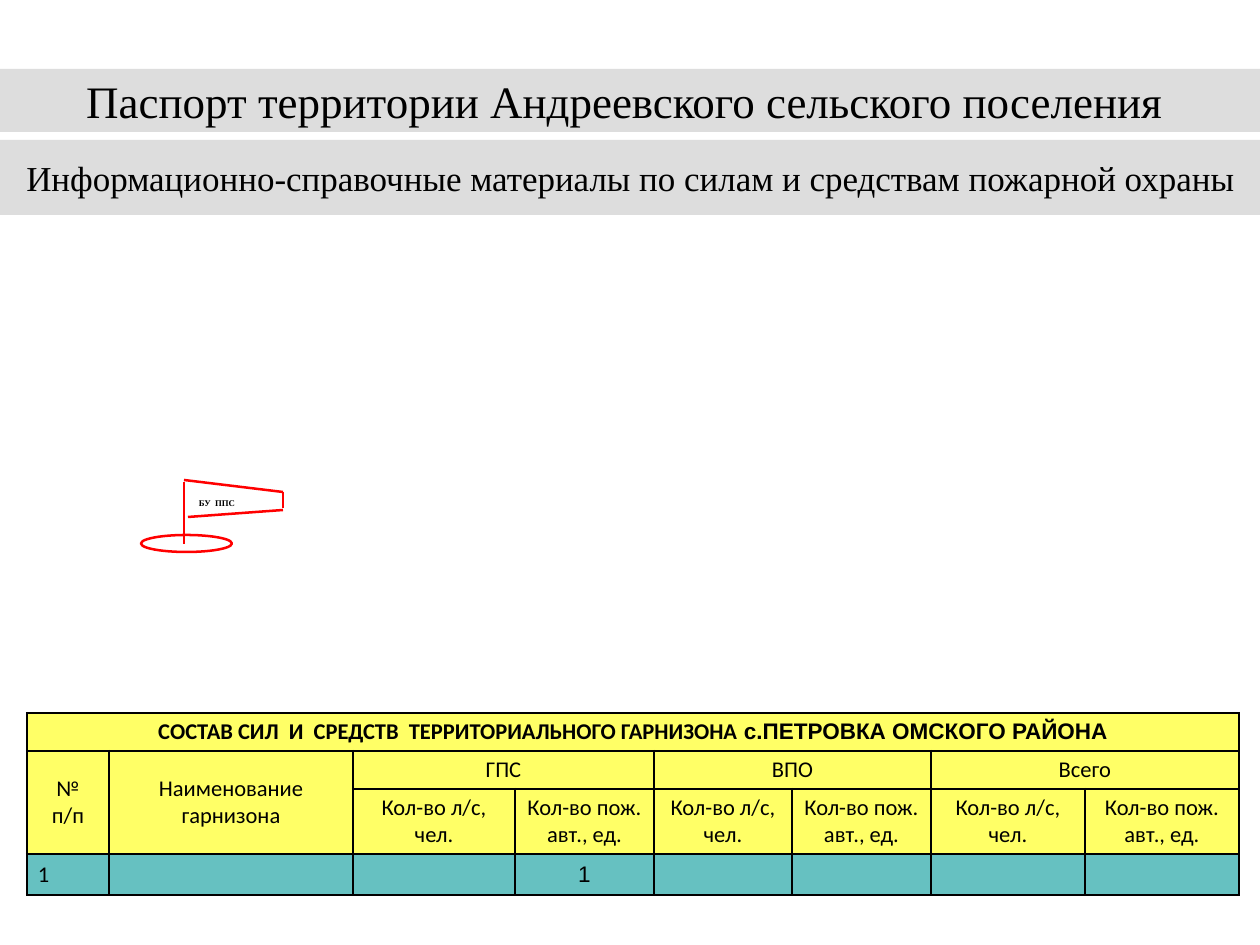
import pptx
import pptx.dml.color
import pptx.enum.shapes
import pptx.enum.text
import pptx.oxml
import pptx.oxml.ns
import pptx.util
from lxml import etree

RGBColor = pptx.dml.color.RGBColor
Pt = pptx.util.Pt
PP_ALIGN = pptx.enum.text.PP_ALIGN
MSO_ANCHOR = pptx.enum.text.MSO_ANCHOR
qn = pptx.oxml.ns.qn

BLACK = RGBColor(0x00, 0x00, 0x00)
GRAY = RGBColor(0xDD, 0xDD, 0xDD)
RED = RGBColor(0xFF, 0x00, 0x00)
YELLOW = RGBColor(0xFF, 0xFF, 0x00)
TEAL = RGBColor(0x00, 0x99, 0x99)

SERIF = "Times New Roman"
PX = 914400 // 90
COLS = [82, 244, 162, 139, 138, 139, 154, 154]
ROWS = [38, 38, 65, 41]
CELL_OPACITY = 60


def px(*lengths):
    return [n * PX for n in lengths]


def set_font(font, name, size, bold=False):
    font.name = name
    font.size = Pt(size)
    font.bold = bold
    font.color.rgb = BLACK


def set_insets(tf, x, y):
    tf.margin_left = tf.margin_right = x * PX
    tf.margin_top = tf.margin_bottom = y * PX


def fill_bar(sp, text, size, anchor, inset_x, inset_y):
    """Turn a shape or placeholder into a gray band with one centred line."""
    sp.fill.solid()
    sp.fill.fore_color.rgb = GRAY
    sp.line.fill.background()
    tf = sp.text_frame
    tf.word_wrap = True
    tf.auto_size = pptx.enum.text.MSO_AUTO_SIZE.NONE
    tf.vertical_anchor = anchor
    set_insets(tf, inset_x, inset_y)
    p = tf.paragraphs[0]
    p.text = text
    p.alignment = PP_ALIGN.CENTER
    set_font(p.font, SERIF, size)


def add_header(slide, left, top, width):
    title = slide.shapes.title
    title.left, title.top, title.width, title.height = px(left, top + 71, width, 75)
    fill_bar(title, "Информационно-справочные материалы по силам и средствам пожарной охраны",
             28, MSO_ANCHOR.MIDDLE, 13, 6)
    sp = slide.shapes.add_shape(pptx.enum.shapes.MSO_SHAPE.RECTANGLE,
                                *px(left, top, width, 63))
    sp.shadow.inherit = False
    fill_bar(sp, "Паспорт территории Андреевского сельского поселения ",
             36, MSO_ANCHOR.TOP, 9, 5)


def style_cell(cell, color):
    cell.fill.solid()
    cell.fill.fore_color.rgb = color
    cell.vertical_anchor = MSO_ANCHOR.MIDDLE
    cell.margin_left = cell.margin_right = 11 * PX
    cell.margin_top = cell.margin_bottom = 5 * PX
    tcPr = cell._tc.get_or_add_tcPr()
    srgb = tcPr.find(qn("a:solidFill")).find(qn("a:srgbClr"))
    etree.SubElement(srgb, qn("a:alpha"), val=str(CELL_OPACITY * 1000))
    for i, side in enumerate(("lnL", "lnR", "lnT", "lnB")):
        ln = etree.Element(qn("a:" + side), w=str(Pt(2)))
        fill = etree.SubElement(ln, qn("a:solidFill"))
        etree.SubElement(fill, qn("a:srgbClr"), val=str(BLACK))
        tcPr.insert(i, ln)


def write_cell(cell, text, font="Calibri", align=PP_ALIGN.CENTER):
    cell.text = text
    for p in cell.text_frame.paragraphs:
        p.alignment = align
        set_font(p.font, font, 18)


def add_garrison_table(slide, left, top):
    frame = slide.shapes.add_table(len(ROWS), len(COLS),
                                   *px(left, top, sum(COLS), sum(ROWS)))
    table = frame.table
    for col, width in zip(table.columns, COLS):
        col.width = width * PX
    for r, height in enumerate(ROWS):
        table.rows[r].height = height * PX
        for c in range(len(COLS)):
            style_cell(table.cell(r, c), TEAL if r == 3 else YELLOW)

    heading = table.cell(0, 0)
    heading.merge(table.cell(0, len(COLS) - 1))
    p = heading.text_frame.paragraphs[0]
    p.alignment = PP_ALIGN.CENTER
    for text, font in (("СОСТАВ СИЛ  И  СРЕДСТВ  ТЕРРИТОРИАЛЬНОГО ГАРНИЗОНА", "Calibri"),
                       (" с.ПЕТРОВКА ОМСКОГО РАЙОНА", "Arial")):
        r = p.add_run()
        r.text = text
        set_font(r.font, font, 18, bold=True)

    for c, text in enumerate(("№\vп/п", "Наименование гарнизона")):
        table.cell(1, c).merge(table.cell(2, c))
        write_cell(table.cell(1, c), text)
    for c, text in zip(range(2, len(COLS), 2), ("ГПС", "ВПО", "Всего")):
        table.cell(1, c).merge(table.cell(1, c + 1))
        write_cell(table.cell(1, c), text)
        write_cell(table.cell(2, c), "Кол-во л/с, чел.")
        write_cell(table.cell(2, c + 1), "Кол-во пож. авт., ед.")

    write_cell(table.cell(3, 0), "1", align=PP_ALIGN.LEFT)
    write_cell(table.cell(3, 3), "1", font="Arial")


def add_flag(slide, left, top):
    """Draw the fire post sign: a labelled pennant on a pole with an oval base."""
    shapes = slide.shapes.add_group_shape().shapes

    tb = shapes.add_textbox(*px(left + 47, top + 13, 73, 22))
    tf = tb.text_frame
    tf.word_wrap = False
    set_insets(tf, 11, 5)
    p = tf.paragraphs[0]
    p.text = "БУ  ППС"
    p.space_after = Pt(12)
    set_font(p.font, SERIF, 7, bold=True)

    base = shapes.add_shape(pptx.enum.shapes.MSO_SHAPE.OVAL,
                            *px(left, top + 55, 91, 17))
    base.shadow.inherit = False
    base.fill.background()
    base.line.color.rgb = RED
    base.line.width = Pt(2)

    pole = (43, 2, 43, 64)
    upper_edge = (43, 0, 142, 12)
    outer_edge = (142, 12, 142, 28)
    lower_edge = (47, 37, 142, 30)
    for x1, y1, x2, y2 in (pole, upper_edge, outer_edge, lower_edge):
        line = shapes.add_connector(pptx.enum.shapes.MSO_CONNECTOR.STRAIGHT,
                                    *px(left + x1, top + y1, left + x2, top + y2))
        line.line.color.rgb = RED
        line.line.width = Pt(2)
        etree.SubElement(line._element.spPr, qn("a:effectLst"))


def main():
    prs = pptx.Presentation()
    prs.slide_width, prs.slide_height = px(1260, 945)
    slide = prs.slides.add_slide(prs.slide_layouts[5])
    add_header(slide, left=0, top=69, width=1260)
    add_garrison_table(slide, left=27, top=713)
    add_flag(slide, left=141, top=480)
    prs.save("out.pptx")


if __name__ == "__main__":
    main()
